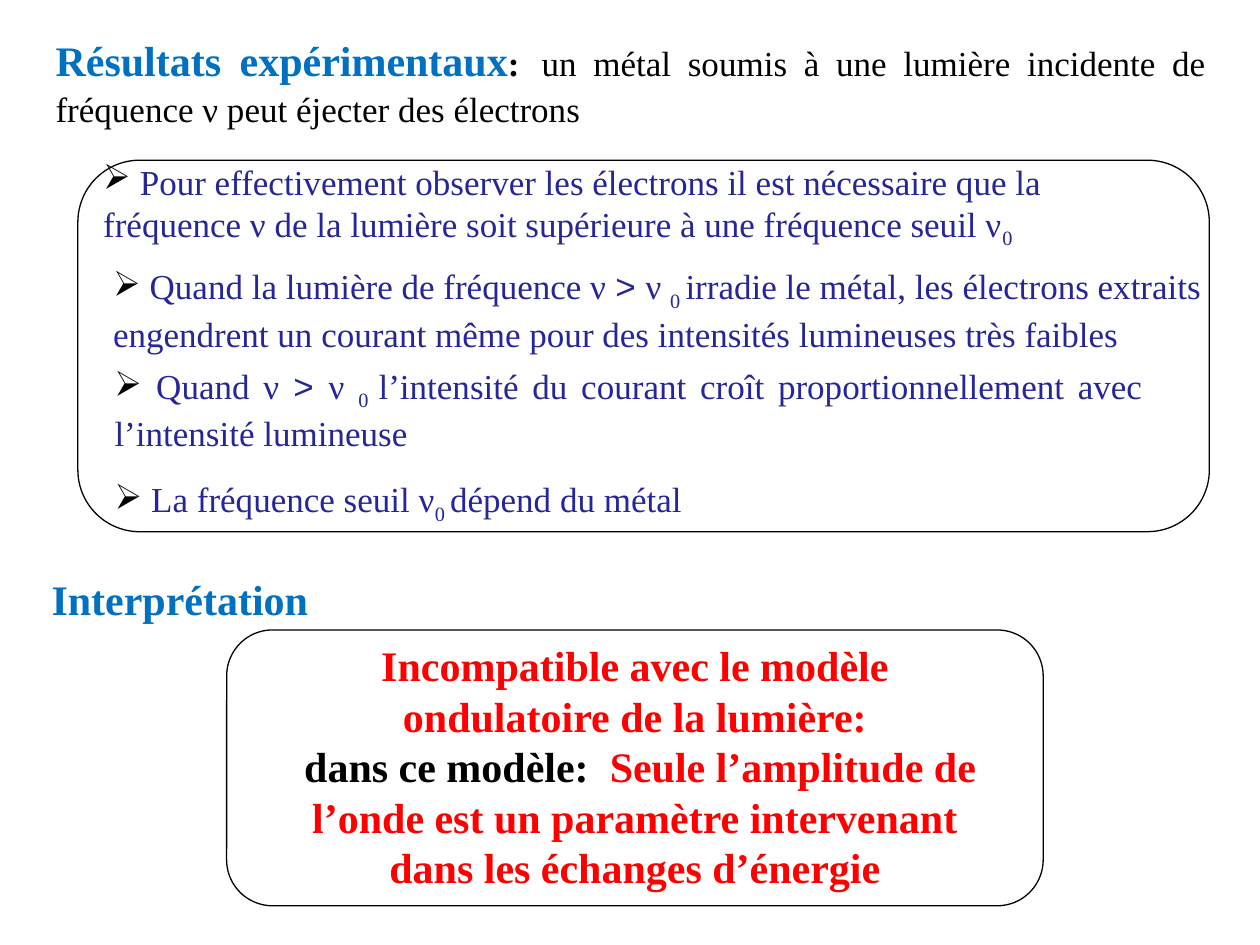
from lxml import etree
from pptx import Presentation
from pptx.dml.color import RGBColor
from pptx.enum.shapes import MSO_SHAPE
from pptx.enum.text import MSO_ANCHOR, MSO_AUTO_SIZE, PP_ALIGN
from pptx.oxml.ns import qn
from pptx.util import Cm, Pt

ROUND = MSO_SHAPE.ROUNDED_RECTANGLE
TOP = MSO_ANCHOR.TOP
GROW = MSO_AUTO_SIZE.SHAPE_TO_FIT_TEXT
FIXED = MSO_AUTO_SIZE.NONE
LEFT, CENTER, FULL = PP_ALIGN.LEFT, PP_ALIGN.CENTER, PP_ALIGN.JUSTIFY

SERIF, SANS = "Times New Roman", "Arial"
BLACK, BLUE, NAVY, RED = "000000", "0070C0", "262699", "FF0000"
INDENT = Cm(0.1)

HEAD = {"size": 24, "bold": True, "color": BLUE}
ALERT = {"size": 24, "bold": True, "color": RED}
ITEM = {"color": NAVY}
SUB = {"color": NAVY, "sub": True}
SIGN = {"color": NAVY, "font": SANS}
ABOVE = [("> ", SIGN), ("ν ", ITEM), ("0 ", SUB)]

# left, top, width, height, alignment, runs
ITEMS = [
    (1.98, 3.23, 22.02, 1.75, LEFT, [
        (" ", {}),
        ("Pour effectivement observer les électrons il est nécessaire que la "
         "fréquence ν de la lumière soit supérieure à une fréquence seuil ν",
         ITEM),
        ("0", SUB)]),
    (2.18, 5.33, 22.23, 1.75, LEFT, [
        (" Quand la lumière de fréquence ν ", ITEM), *ABOVE,
        ("irradie le métal, les électrons extraits engendrent un courant "
         "même pour des intensités lumineuses très faibles", ITEM)]),
    (2.21, 7.34, 21.21, 1.09, FULL, [
        (" Quand ν ", ITEM), *ABOVE,
        ("l’intensité du courant croît proportionnellement avec  "
         "l’intensité lumineuse", ITEM)]),
    (2.21, 9.63, 21.21, 1.09, LEFT, [
        (" ", {}), ("La fréquence seuil ν", ITEM), ("0 ", SUB),
        ("dépend du métal", ITEM)]),
]


def rgb(code):
    return RGBColor.from_string(code)


def place(shape, left, top, width, height):
    shape.left, shape.top = Cm(left), Cm(top)
    shape.width, shape.height = Cm(width), Cm(height)


def add_run(para, text, size=20, color=BLACK, bold=False, font=SERIF,
            sub=False):
    run = para.add_run()
    run.text = text
    run.font.size, run.font.name = Pt(size), font
    run.font.bold = bold
    run.font.color.rgb = rgb(color)
    if sub:
        run.font._element.set("baseline", "-25000")


def fill_para(para, runs, align=LEFT, indent=INDENT):
    para.alignment = align
    props = para._p.get_or_add_pPr()
    props.set("marL", str(indent))
    props.set("indent", "0")
    for text, style in runs:
        add_run(para, text, **style)


def add_bullet(para):
    props = para._p.get_or_add_pPr()
    tint = etree.SubElement(props, qn("a:buClr"))
    etree.SubElement(tint, qn("a:srgbClr"), val=BLACK)
    etree.SubElement(props, qn("a:buChar"), char="➢")


def set_frame(frame, fit=FIXED):
    frame.word_wrap = True
    frame.auto_size = fit
    frame.vertical_anchor = TOP
    frame.margin_left = frame.margin_top = frame.margin_bottom = 0
    frame.margin_right = INDENT


def add_text(slide, box):
    frame = slide.shapes.add_textbox(*map(Cm, box)).text_frame
    set_frame(frame)
    return frame


def add_title(slide):
    title = slide.shapes.title
    place(title, 1.02, 0.41, 23.39, 2.24)
    set_frame(title.text_frame, GROW)
    fill_para(title.text_frame.paragraphs[0], [
        ("Résultats expérimentaux", HEAD),
        (":", {"bold": True}),
        (" ", {"size": 32}),
        ("un métal soumis à une lumière incidente de fréquence ν peut "
         "éjecter des électrons", {})], FULL)


def add_item(slide, *box, align, runs):
    para = add_text(slide, box).paragraphs[0]
    fill_para(para, runs, align)
    add_bullet(para)


def add_verdict(slide):
    frame = add_text(slide, (5.56, 12.9, 14.48, 4.78))
    fill_para(frame.paragraphs[0], [
        ("Incompatible avec le modèle ondulatoire de la lumière:", ALERT)],
        CENTER)
    fill_para(frame.add_paragraph(), [
        (" ", ALERT),
        ("dans ce modèle:  ", {**ALERT, "color": BLACK}),
        ("Seule l’amplitude de l’onde est un paramètre intervenant dans les "
         "échanges d’énergie", ALERT)], CENTER)


def add_border(slide, *box):
    shape = slide.shapes.add_shape(ROUND, *map(Cm, box))
    shape.shadow.inherit = False
    shape.fill.background()
    shape.line.color.rgb = rgb(BLACK)
    shape.line.width = Pt(0.75)


def add_label(slide, text, *box):
    frame = slide.shapes.add_textbox(*map(Cm, box)).text_frame
    frame.word_wrap = False
    frame.auto_size = GROW
    fill_para(frame.paragraphs[0], [(text, HEAD)], indent=0)


def main():
    deck = Presentation()
    deck.slide_width, deck.slide_height = Cm(25.4), Cm(19.05)
    slide = deck.slides.add_slide(deck.slide_layouts.get_by_name("Title Only"))
    add_title(slide)
    for *box, align, runs in ITEMS:
        add_item(slide, *box, align=align, runs=runs)
    add_verdict(slide)
    add_border(slide, 1.57, 3.23, 22.81, 7.49)
    add_border(slide, 4.57, 12.7, 16.46, 5.56)
    add_label(slide, "Interprétation", 0.79, 11.43, 5.74, 1.27)
    deck.save("out.pptx")


if __name__ == "__main__":
    main()
